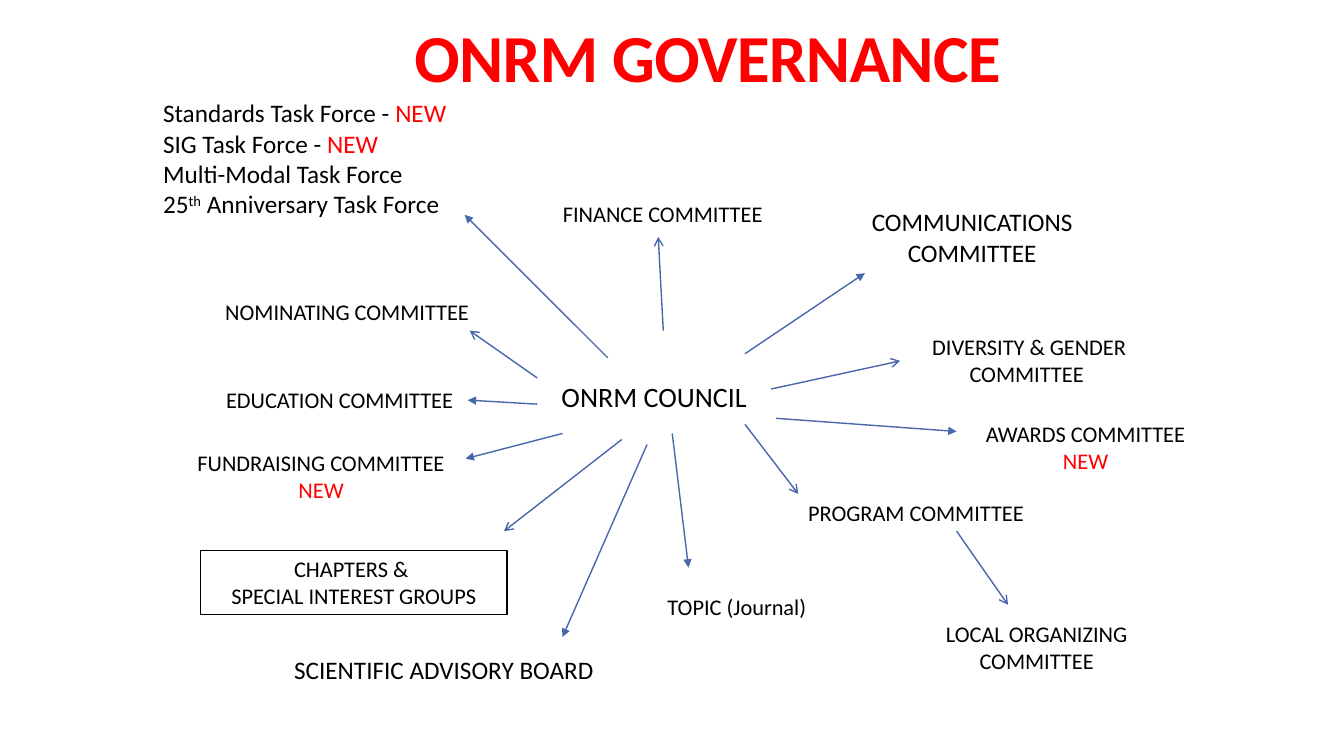
import pptx
import pptx.dml.color
import pptx.enum.shapes
import pptx.enum.text
import pptx.oxml.ns
import pptx.util
from lxml import etree

Pt = pptx.util.Pt
RGBColor = pptx.dml.color.RGBColor
Align = pptx.enum.text.PP_ALIGN

BLACK = RGBColor(0x00, 0x00, 0x00)
RED = RGBColor(0xFF, 0x00, 0x00)
WHITE = RGBColor(0xFF, 0xFF, 0xFF)
BLUE = RGBColor(0x4A, 0x66, 0xAC)
NEW = "NEW"


class GovernanceSlide:
    font = "Calibri"

    def __init__(self, deck):
        self.slide = deck.slides.add_slide(deck.slide_layouts[5])

    def style(self, run, size, color):
        run.font.name = self.font
        run.font.size = Pt(size)
        run.font.color.rgb = color

    def title(self, text, left, top, width, height):
        heading = self.slide.shapes.title
        heading.left, heading.top = Pt(left), Pt(top)
        heading.width, heading.height = Pt(width), Pt(height)
        heading.fill.solid()
        heading.fill.fore_color.rgb = WHITE
        frame = heading.text_frame
        frame.text = text
        frame.auto_size = pptx.enum.text.MSO_AUTO_SIZE.NONE
        frame.vertical_anchor = pptx.enum.text.MSO_ANCHOR.BOTTOM
        paragraph = frame.paragraphs[0]
        paragraph.alignment = Align.CENTER
        paragraph.line_spacing = 0.85
        run = paragraph.runs[0]
        self.style(run, 48, RED)
        run.font.bold = True
        run.font._element.set("spc", "-50")

    def label(self, lines, left, top, width, height, size=16, align=Align.CENTER):
        """Add a text box; each line is a tuple of runs, with NEW in red and "th" raised."""
        box = self.slide.shapes.add_textbox(Pt(left), Pt(top), Pt(width), Pt(height))
        frame = box.text_frame
        frame.word_wrap = True
        for index, pieces in enumerate(lines):
            paragraph = frame.paragraphs[0] if index == 0 else frame.add_paragraph()
            paragraph.alignment = align
            for piece in pieces:
                run = paragraph.add_run()
                run.text = piece
                self.style(run, size, RED if piece == NEW else BLACK)
                if piece == "th":
                    run.font._element.set("baseline", "30000")
        return box

    def arrow(self, x1, y1, x2, y2, head):
        link = self.slide.shapes.add_connector(
            pptx.enum.shapes.MSO_CONNECTOR.STRAIGHT, Pt(x1), Pt(y1), Pt(x2), Pt(y2))
        link.line.color.rgb = BLUE
        link.line.width = Pt(1)
        qn = pptx.oxml.ns.qn
        etree.SubElement(link.line._get_or_add_ln(), qn("a:tailEnd"), type=head)
        etree.SubElement(link._element.spPr, qn("a:effectLst"))


def main():
    deck = pptx.Presentation()
    deck.slide_width, deck.slide_height = Pt(960), Pt(540)
    page = GovernanceSlide(deck)
    page.title("ONRM GOVERNANCE", 109.4, 5.8, 792, 66.2)

    page.label([("ONRM COUNCIL",)], 374.4, 267.8, 185.8, 31.5, size=20)
    page.label([("PROGRAM COMMITTEE",)], 570.2, 352.8, 174.2, 26.6, align=Align.LEFT)
    page.label([("Standards Task Force - ", NEW),
                ("SIG Task Force - ", NEW),
                ("Multi-Modal Task Force",),
                ("25", "th", " Anniversary Task Force")],
               109.4, 66.2, 244.1, 94.3, size=18, align=Align.LEFT)
    page.label([("COMMUNICATIONS COMMITTEE",)], 600.5, 144, 187.9, 51, size=18)
    page.label([("SCIENTIFIC ADVISORY BOARD",)], 77, 463.7, 480.2, 29, size=18)

    committees = [
        ([("NOMINATING COMMITTEE",)], 149, 209.5, 198, 26.6),
        ([("FINANCE COMMITTEE",)], 392.4, 139.7, 162, 26.6),
        ([("DIVERSITY & GENDER COMMITTEE ",)], 643, 234.7, 184.3, 46),
        ([("LOCAL ORGANIZING COMMITTEE",)], 656.6, 439.2, 167.8, 46),
        ([("TOPIC (Journal)",)], 434.2, 419.8, 184.3, 26.6),
        ([("EDUCATION COMMITTEE",)], 150.5, 272.2, 184.3, 26.6),
        ([("FUNDRAISING COMMITTEE",), (NEW,)], 125.3, 317.5, 208.1, 46),
        ([("AWARDS COMMITTEE ", NEW)], 683.3, 296.6, 184.3, 46),
    ]
    for committee in committees:
        page.label(*committee)

    chapters = page.label([("CHAPTERS & ",), ("SPECIAL INTEREST GROUPS",)],
                          143.3, 393.1, 218.9, 46)
    chapters.line.color.rgb = BLACK
    chapters.line.width = Pt(1)

    open_arrows = [
        (473.8, 236.2, 470.2, 169.2),  # finance
        (383.8, 270, 335.5, 236.2),    # nominating
        (550.8, 277.9, 643, 257.8),    # diversity
        (532.1, 303.1, 570.2, 352.8),  # program
        (683.3, 379.4, 720, 432),      # program to local organizing
        (444.2, 313.9, 360, 379.4),    # chapters
    ]
    solid_arrows = [
        (532.1, 252.7, 617.8, 195.1),  # communications
        (480.2, 309.6, 491.8, 405.4),  # topic
        (434.2, 255.6, 331.9, 153.4),  # task forces
        (383.8, 288.7, 334.1, 285.8),  # education
        (401.8, 309.6, 332.6, 327.6),  # fundraising
        (554.4, 298.8, 683.3, 308.2),  # awards
        (462.2, 317.5, 401.8, 455),    # advisory board
    ]
    for head, arrows in (("arrow", open_arrows), ("triangle", solid_arrows)):
        for ends in arrows:
            page.arrow(*ends, head)

    deck.save("out.pptx")


if __name__ == "__main__":
    main()
